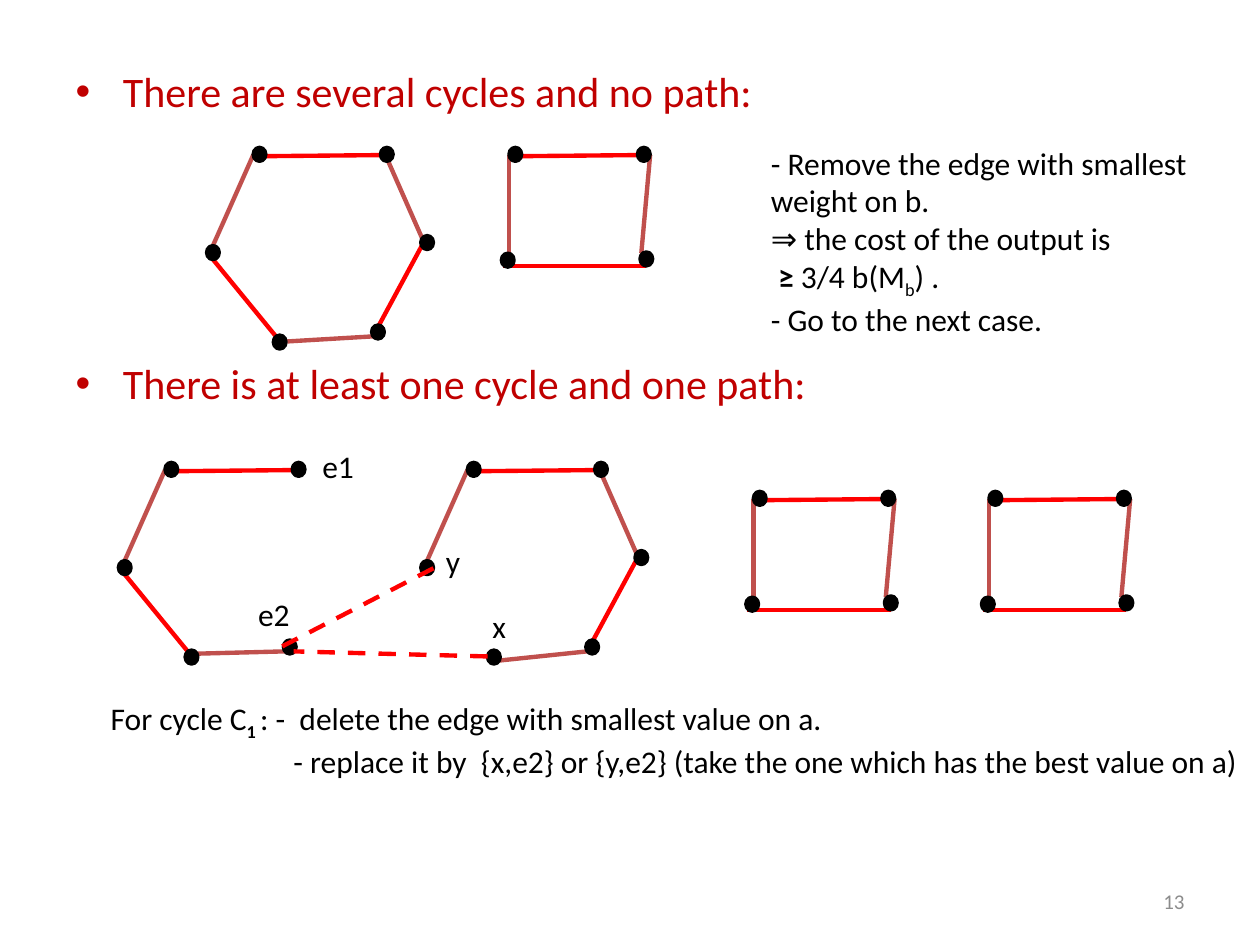
from lxml import etree
from pptx import Presentation
from pptx.dml.color import RGBColor
from pptx.enum import dml, shapes, text
from pptx.oxml.ns import qn
from pptx.util import Inches, Pt

BLACK, GREY, HEADING = "000000", "8C8C8C", "C00000"
BROWN, RED = "C0504D", "FF0000"
NODE_W, NODE_H = 0.1, 0.11

# Edges and nodes, in inches from the top left of each figure
HEX_EDGES = {
    "upper left": (BROWN, (0.37, 0.06), (0.05, 0.78)),
    "upper right": (BROWN, (1.41, 0.04), (1.71, 0.72)),
    "top": (RED, (1.48, 0.06), (0.44, 0.07)),
    "lower right": (RED, (1.32, 1.5), (1.73, 0.74)),
    "lower left": (RED, (0.55, 1.5), (0.01, 0.84)),
}
HEX_NODES = [(0, 0.78), (0.37, 0), (1.38, 0), (1.7, 0.7), (0.53, 1.49), (1.31, 1.41)]
HEX_RIGHT = (1.7, 0.7)
HEX_BOTTOM_END = (1.32, 1.5)
SQUARE_EDGES = [
    (BROWN, (0.06, 0.06), (0.06, 0.89)),
    (BROWN, (1.18, 0.06), (1.11, 0.84)),
    (RED, (1.18, 0.06), (0.13, 0.07)),
    (RED, (1.15, 0.94), (0.01, 0.94)),
]
SQUARE_NODES = [(0, 0.84), (0.06, 0), (1.08, 0), (1.1, 0.83)]


def rgb(color):
    return RGBColor.from_string(color)


def add_run(p, words, size=18, color=BLACK, bold=False, subscript=False):
    r = p.add_run()
    r.text = words
    r.font.name = "Calibri"
    r.font.size = Pt(size)
    r.font.color.rgb = rgb(color)
    if bold:
        r.font.bold = True
    if subscript:
        r.font._element.set("baseline", "-25000")


def add_text(s, box, paragraphs, wrap=True, **style):
    """Each paragraph is a list of (words, run options)."""
    tf = s.shapes.add_textbox(*map(Inches, box)).text_frame
    tf.word_wrap = wrap
    for i, runs in enumerate(paragraphs):
        p = tf.add_paragraph() if i else tf.paragraphs[0]
        for words, options in runs:
            add_run(p, words, **style, **options)
    return tf


def add_edge(s, color, start, end, left=0, top=0, dashed=False):
    (x1, y1), (x2, y2) = start, end
    edge = s.shapes.add_connector(
        shapes.MSO_CONNECTOR.STRAIGHT,
        Inches(left + x1), Inches(top + y1), Inches(left + x2), Inches(top + y2))
    edge.line.color.rgb = rgb(color)
    edge.line.width = Pt(2.5)
    if dashed:
        edge.line.dash_style = dml.MSO_LINE.DASH
    etree.SubElement(edge._element.spPr, qn("a:effectLst"))


def add_graph(s, left, top, edges, nodes):
    for color, start, end in edges:
        add_edge(s, color, start, end, left, top)
    for x, y in nodes:
        sp = s.shapes.add_shape(
            shapes.MSO_SHAPE.FLOWCHART_CONNECTOR,
            Inches(left + x), Inches(top + y), Inches(NODE_W), Inches(NODE_H))
        sp.shadow.inherit = False
        sp.fill.solid()
        sp.fill.fore_color.rgb = rgb(BLACK)
        sp.line.color.rgb = rgb(BLACK)
        sp.line.width = Pt(2)


def add_hexagon(s, left, top, bottom_start, missing=(), nodes=HEX_NODES):
    edges = [edge for name, edge in HEX_EDGES.items() if name not in missing]
    edges.append((BROWN, bottom_start, HEX_BOTTOM_END))
    add_graph(s, left, top, edges, nodes)


def add_square(s, left, top):
    add_graph(s, left, top, SQUARE_EDGES, SQUARE_NODES)


def add_headings(s, box):
    title, body = s.shapes.title, s.placeholders[1]
    title._element.getparent().remove(title._element)
    body.left, body.top, body.width, body.height = map(Inches, box)
    tf = body.text_frame
    add_run(tf.paragraphs[0], "There are several cycles and no path:", 24, HEADING)
    p = tf.add_paragraph()
    p.space_before = Pt(138)
    add_run(p, "There is at least one cycle and one path:", 24, HEADING)


def add_cycles_case(s, left, top):
    add_hexagon(s, left, top, (0.64, 1.54))
    add_square(s, left + 2.34, top)
    add_text(s, (left + 4.38, top - 0.08, 3.67, 1.92), [
        [("- Remove the edge with smallest weight on b.", {})],
        [("⇒ the cost of the output is", {})],
        [(" ", {}), ("≥ ", {"bold": True}), ("3/4 b(M", {}),
         ("b", {"subscript": True}), (") .", {})],
        [("- Go to the next case.", {})],
    ])


def add_mixed_case(s, left, top):
    # Cycle to open, the two squares and the path
    add_hexagon(s, left + 2.4, top, (0.55, 1.58), missing=["lower left"])
    for x in (4.98, 6.85):
        add_square(s, left + x, top + 0.23)
    add_hexagon(s, left, top, (0.55, 1.52), missing=["upper right", "lower right"],
                nodes=[node for node in HEX_NODES if node != HEX_RIGHT])

    # Candidate replacement edges
    for start, end in (((2.93, 1.54), (1.39, 1.5)), ((2.5, 0.84), (1.3, 1.46))):
        add_edge(s, RED, start, end, left, top, dashed=True)

    # Node labels
    for label, x, y, width in (("y", 2.5, 0.58, 0.33), ("x", 2.87, 1.1, 0.35),
                               ("e1", 1.52, -0.17, 0.45), ("e2", 1.01, 1, 0.49)):
        add_text(s, (left + x, top + y, width, 0.4), [[(label, {})]], wrap=False)


def add_rule(s, box):
    tf = add_text(s, box, [
        [("For cycle C", {}), ("1 ", {"bold": True, "subscript": True}),
         (": -  delete the edge with smallest value on a.", {})],
        [("- replace it by  {x,e2} or {y,e2} (take the one which has "
          "the best value on a)", {})],
    ])
    tf.paragraphs[1]._p.get_or_add_pPr().set("marL", str(Inches(1.45)))


def add_page_number(s, box):
    tf = add_text(s, box, [[("13", {})]], size=12, color=GREY)
    tf.vertical_anchor = text.MSO_ANCHOR.MIDDLE
    tf.paragraphs[0].alignment = text.PP_ALIGN.RIGHT


def main():
    prs = Presentation()
    prs.slide_width, prs.slide_height = Inches(10), Inches(7.5)
    s = prs.slides.add_slide(prs.slide_layouts[1])
    add_headings(s, (0.5, 0.47, 9, 6.23))
    add_page_number(s, (7.17, 6.95, 2.33, 0.4))
    add_cycles_case(s, 1.64, 1.17)
    add_mixed_case(s, 0.94, 3.67)
    add_rule(s, (0.78, 5.5, 10.91, 1.01))
    prs.save("out.pptx")


if __name__ == "__main__":
    main()
